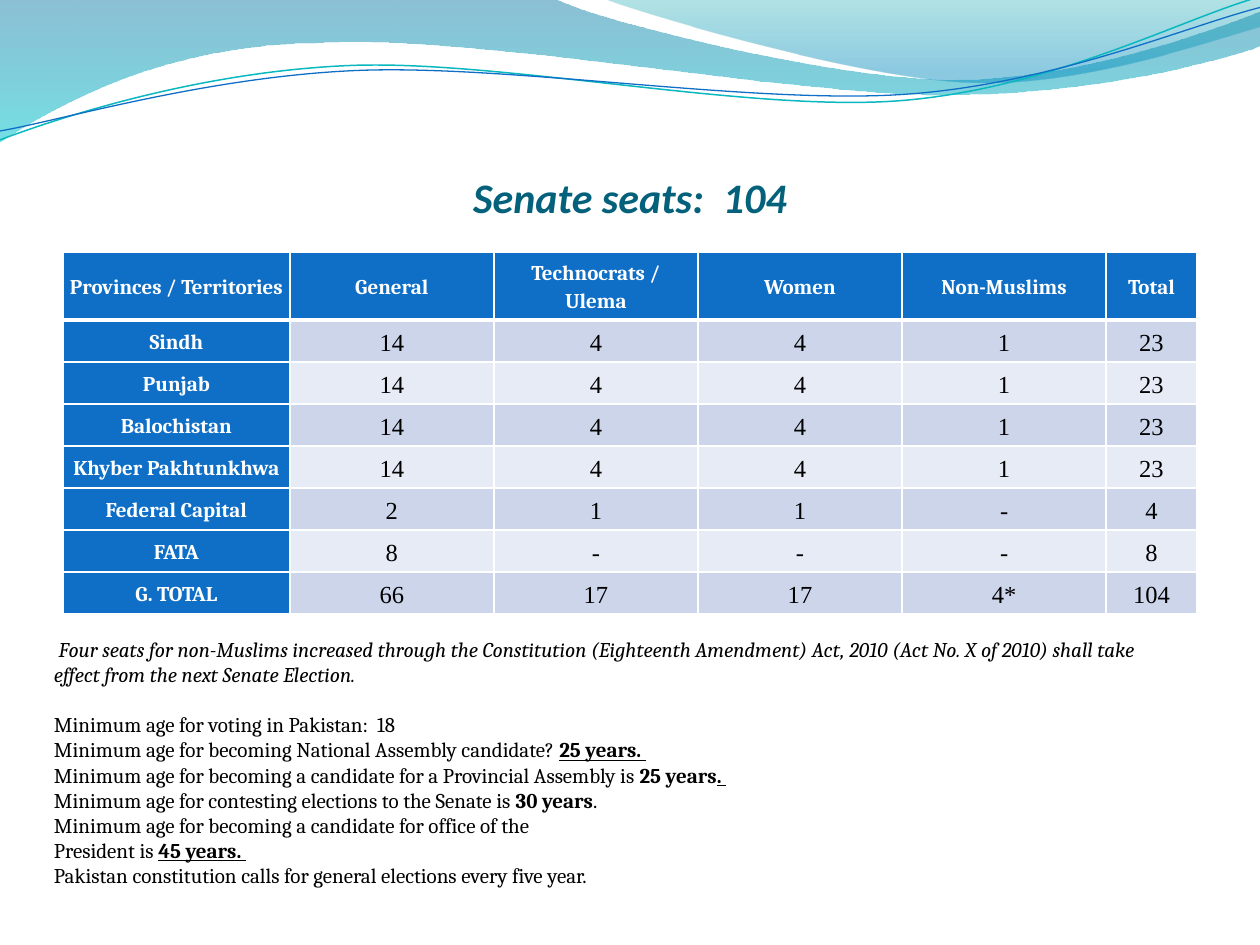
from math import cos, radians, sin

from lxml import etree
from pptx import Presentation
from pptx.dml.color import RGBColor
from pptx.enum.text import MSO_ANCHOR, MSO_AUTO_SIZE, PP_ALIGN
from pptx.oxml.ns import qn
from pptx.util import Inches, Pt

CENTER = PP_ALIGN.CENTER
MIDDLE, BOTTOM = MSO_ANCHOR.MIDDLE, MSO_ANCHOR.BOTTOM
GROW = MSO_AUTO_SIZE.SHAPE_TO_FIT_TEXT

BLUE, WHITE, BLACK = "0F6FC6", "FFFFFF", "000000"
BANDS = ["CCD5EA", "E7EBF5"]
CURVE_TILT = -2.7

# Each outline is a list of parts: one point is a line, three points are a cubic curve.
LEFT_WAVE = [
    [(0, -0.01)], [(4.4, -0.01)], [(4.76, 0.17), (6.64, 0.63), (7.58, 0.63)],
    [(8.53, 0.63), (9.58, 0.26), (10, 0.09)], [(10.01, 0.36)],
    [(9.83, 0.44), (8.7, 0.76), (7.46, 0.75)], [(6.22, 0.75), (3.82, 0.28), (2.57, 0.34)],
    [(1.29, 0.35), (0.46, 0.83), (-0.01, 1.13)], [(0, -0.01)],
]
RIGHT_WAVE = [
    [(4.79, -0.01)], [(5.09, 0.11), (6.82, 0.62), (7.69, 0.65)],
    [(8.56, 0.69), (9.61, 0.32), (10, 0.21)], [(10, 0)], [(4.79, -0.01)],
]
TEAL_CURVE = [
    [(0, 1.11)], [(0.48, 0.93), (1.58, 0.57), (2.77, 0.52)],
    [(3.95, 0.47), (5.93, 0.89), (7.13, 0.8)], [(8.33, 0.71), (9.38, 0.15), (9.98, -0.02)],
]
BLUE_CURVE = [
    [(0, 1.04)], [(0.47, 0.96), (1.64, 0.61), (2.83, 0.56)],
    [(4.03, 0.51), (5.97, 0.83), (7.17, 0.75)], [(8.36, 0.67), (9.41, 0.21), (10, 0.06)],
]

COLUMN_WIDTHS = [1.8, 1.62, 1.62, 1.62, 1.62, 0.72]
SEATS = [
    ["Provinces / Territories", "General", "Technocrats / Ulema", "Women", "Non-Muslims", "Total"],
    ["Sindh", "14", "4", "4", "1", "23"],
    ["Punjab", "14", "4", "4", "1", "23"],
    ["Balochistan", "14", "4", "4", "1", "23"],
    ["Khyber Pakhtunkhwa", "14", "4", "4", "1", "23"],
    ["Federal Capital", "2", "1", "1", "-", "4"],
    ["FATA", "8", "-", "-", "-", "8"],
    ["G. TOTAL", "66", "17", "17", "4*", "104"],
]

AMENDMENT = (" Four seats for non-Muslims increased through the Constitution (Eighteenth Amendment) "
             "Act, 2010 (Act No. X of 2010) shall take effect from the next Senate Election.")
NOTES = [
    [(AMENDMENT, "i")],
    [("Minimum age for voting in Pakistan:  18", "")],
    [("Minimum age for becoming National Assembly candidate? ", ""), ("25 years. ", "bu")],
    [("Minimum age for becoming a candidate for a Provincial Assembly is ", ""),
     ("25 years", "b"), (". ", "bu")],
    [("Minimum age for contesting elections to the Senate is ", ""), ("30 years", "b"), (".", "")],
    [("Minimum age for becoming a candidate for office of the", "")],
    [("President is ", ""), ("45 years. ", "bu")],
    [("Pakistan constitution calls for general elections every five year.", "")],
]


def rgb(value):
    """Return the colour for a hex string."""
    return RGBColor.from_string(value)


def add_run(p, text, size, font, color, style=""):
    """Add a run; style holds any of b, i and u."""
    r = p.add_run()
    r.text = text
    r.font.size, r.font.name = Pt(size), font
    r.font.color.rgb = rgb(color)
    r.font.bold, r.font.italic, r.font.underline = (key in style for key in "biu")


def turn(outline, degrees, center):
    """Turn every point of an outline clockwise about a center."""
    (cx, cy), c, n = center, cos(radians(degrees)), sin(radians(degrees))
    return [[(cx + (x - cx) * c - (y - cy) * n, cy + (x - cx) * n + (y - cy) * c)
             for x, y in part] for part in outline]


def add_outline(s, outline, close):
    """Draw an outline of lines and cubic curves without shadow."""
    points = [(Inches(x), Inches(y)) for part in outline for x, y in part]
    builder = s.shapes.build_freeform(*points[0])
    builder.add_line_segments(points[1:], close=close)
    sp = builder.convert_to_shape()
    sp.shadow.inherit = False
    lines = iter(list(sp._element.spPr.iter(qn("a:lnTo"))))
    for part in outline[1:]:
        first, *others = [next(lines) for _ in part]
        if others:
            curve = etree.Element(qn("a:cubicBezTo"))
            first.addprevious(curve)
            for line in (first, *others):
                curve.append(line[0])
                line.getparent().remove(line)
    return sp


def add_wave(s, outline, stops):
    """Draw a wave with a see-through gradient from top to bottom."""
    sp = add_outline(s, outline, True)
    sp.line.fill.background()
    sp.fill.gradient()
    sp.fill.gradient_angle = 270
    for stop, (position, color, _) in zip(sp.fill.gradient_stops, stops):
        stop.position = position
        stop.color.rgb = rgb(color)
    colors = sp._element.spPr.iter(qn("a:srgbClr"))
    for element, (_, _, opacity) in zip(colors, stops):
        etree.SubElement(element, qn("a:alpha"), val=str(opacity * 1000))


def add_curve(s, outline, center, color, width):
    """Draw an open curve as a level outline that is then tilted."""
    sp = add_outline(s, turn(outline, -CURVE_TILT, center), False)
    sp.rotation = CURVE_TILT
    sp.fill.background()
    sp.line.color.rgb = rgb(color)
    sp.line.width = Pt(width)


def set_title(s, text):
    """Place, format and fill the title, in front of the waves."""
    title = s.shapes.title
    s.shapes._spTree.append(title._element)
    title.left, title.top, title.width, title.height = map(Inches, (0.5, 0.77, 9, 1.25))
    tf = title.text_frame
    tf.vertical_anchor = BOTTOM
    tf.margin_left = tf.margin_right = 0
    tf.margin_bottom = Inches(0.26)
    p = tf.paragraphs[0]
    p.alignment = CENTER
    add_run(p, text, 24, "Calibri", "04617B", "bi")


def set_borders(cell, top, bottom):
    """Give a cell white borders; widths are in points."""
    tc_pr = cell._tc.get_or_add_tcPr()
    for side, width in (("L", 1), ("R", 1), ("T", top), ("B", bottom)):
        ln = etree.SubElement(tc_pr, qn(f"a:ln{side}"), w=str(Pt(width)))
        fill = etree.SubElement(ln, qn("a:solidFill"))
        etree.SubElement(fill, qn("a:srgbClr"), val=WHITE)


def fill_cell(cell, text, row, col):
    """Format and fill one cell by its place in the table."""
    heading = row == 0 or col == 0
    set_borders(cell, 3 if row == 1 else 1, 3 if row == 0 else 1)
    cell.fill.solid()
    cell.fill.fore_color.rgb = rgb(BLUE if heading else BANDS[(row - 1) % 2])
    cell.vertical_anchor = MIDDLE
    cell.margin_left = cell.margin_right = Pt(3.1)
    cell.margin_top = cell.margin_bottom = Pt(3.1)
    p = cell.text_frame.paragraphs[0]
    p.alignment, p.line_spacing = CENTER, 1.15
    if heading:
        add_run(p, text, 12, "Cambria", WHITE, "b")
    else:
        add_run(p, text, 14, "Times New Roman", BLACK)


def add_seat_table(s):
    """Add the table of Senate seats."""
    frame = s.shapes.add_table(len(SEATS), len(COLUMN_WIDTHS), Inches(0.5), Inches(2),
                               Inches(9), Inches(3))
    table = frame.table
    for column, width in zip(table.columns, COLUMN_WIDTHS):
        column.width = Inches(width)
    for i, values in enumerate(SEATS):
        table.rows[i].height = Inches(0.31 if i else 0.54)
        for j, text in enumerate(values):
            fill_cell(table.cell(i, j), text, i, j)
    frame.height = Inches(3)


def add_notes(s):
    """Add the remarks below the table."""
    tf = s.shapes.add_textbox(Inches(0.33), Inches(5), Inches(9.17), Inches(2.12)).text_frame
    tf.word_wrap = True
    tf.auto_size = GROW
    for i, runs in enumerate(NOTES):
        p = tf.add_paragraph() if i else tf.paragraphs[0]
        if i == 1:
            p.space_before = Pt(14.4)
        for text, style in runs:
            add_run(p, text, 12, "Cambria", BLACK, style)


def main():
    """Build and save the slide."""
    prs = Presentation()
    prs.slide_width, prs.slide_height = Inches(10), Inches(7.5)
    s = prs.slides.add_slide(prs.slide_layouts[5])
    add_wave(s, LEFT_WAVE, [(0, "0074A1", 45), (1, "00C6CF", 55)])
    add_wave(s, RIGHT_WAVE, [(0, "00A1A9", 30), (0.8, "008BBF", 45)])
    add_curve(s, TEAL_CURVE, (4.99, 0.57), "0AB8BF", 0.85)
    add_curve(s, BLUE_CURVE, (5, 0.59), BLUE, 0.75)
    set_title(s, "Senate seats:  104")
    add_seat_table(s)
    add_notes(s)
    prs.save("out.pptx")


if __name__ == "__main__":
    main()
